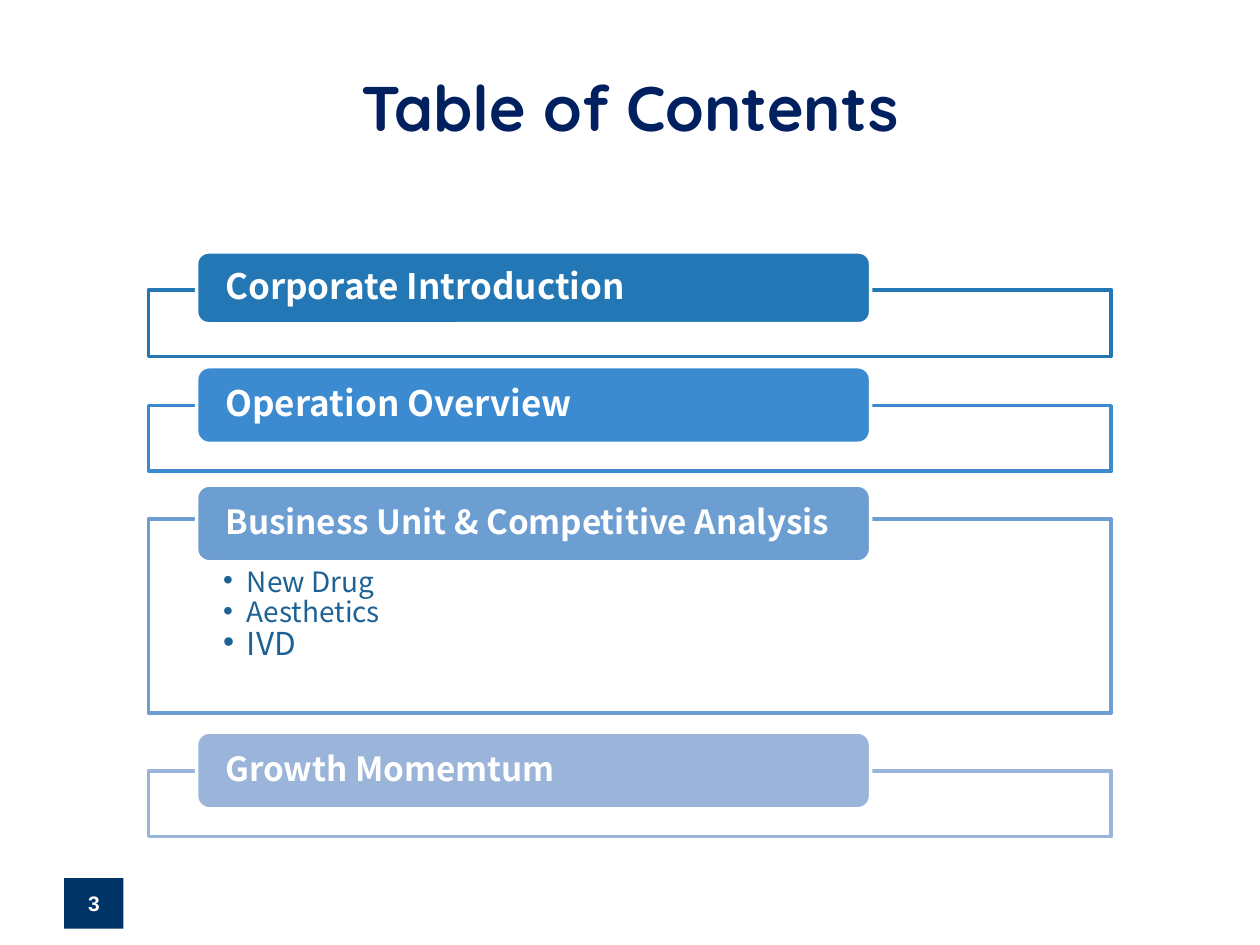
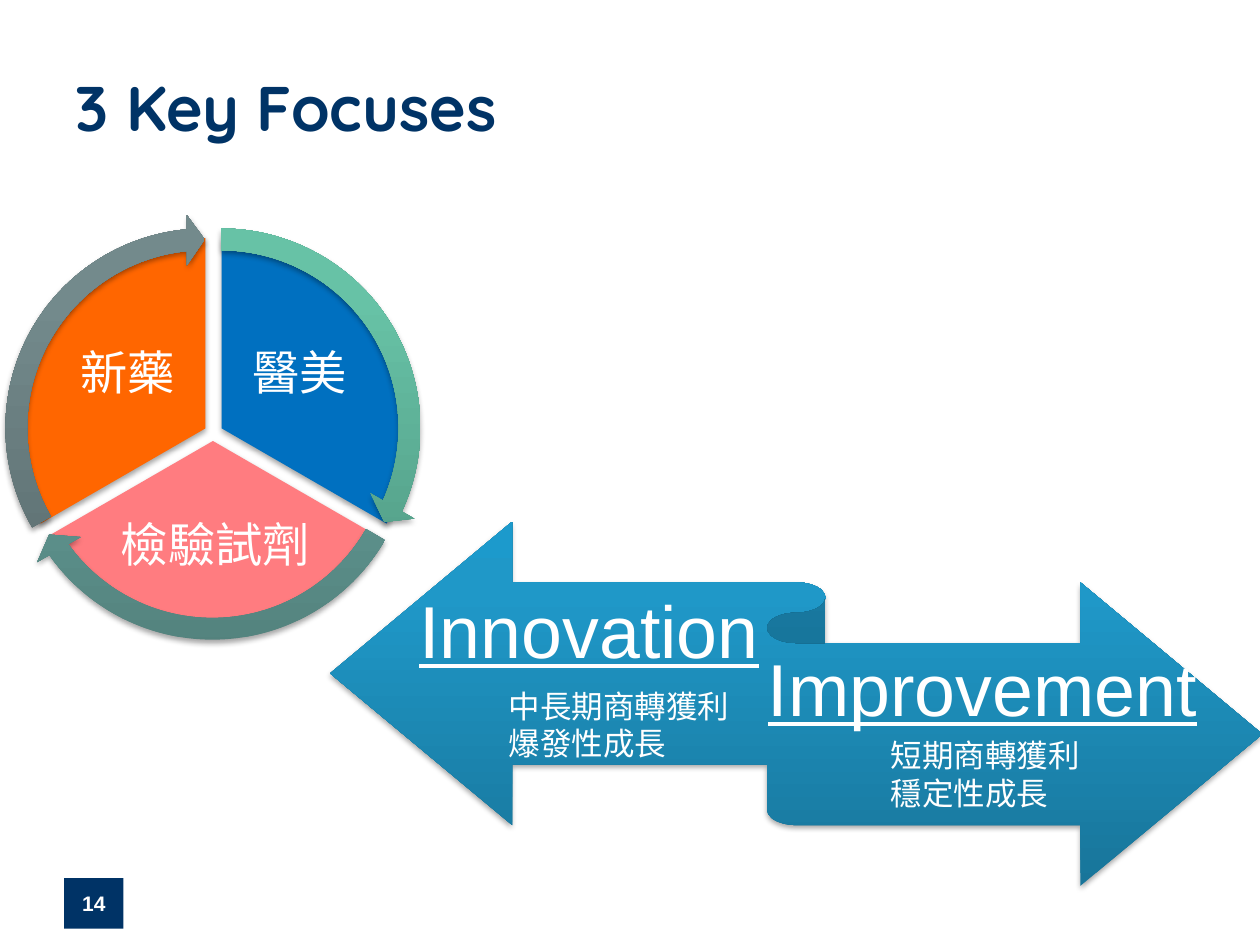
from copy import deepcopy
from dataclasses import dataclass

from lxml.etree import SubElement
from pptx import Presentation
from pptx.dml.color import RGBColor
from pptx.enum.shapes import MSO_SHAPE
from pptx.enum.text import MSO_ANCHOR, MSO_AUTO_SIZE, PP_ALIGN
from pptx.oxml.ns import qn
from pptx.util import Pt

PX = 9144  # EMU per px, 100 px to the inch


@dataclass(frozen=True)
class Theme:
    # Colours
    white: str = "FFFFFF"
    navy: str = "003366"
    contents_title: str = "002060"
    bullet_text: str = "1D6294"
    agenda: tuple = ("2277B4", "3C8ACF", "6D9ED2", "9AB5D9")
    pies: tuple = ("0070C0", "FF7C80", "FF6600")
    arrows: tuple = (("4F9580", "67C2A6", "66C4A7"),
                     ("53827D", "6BA9A3", "6BABA4"),
                     ("596A6C", "738A8C", "738B8E"))
    ribbon: tuple = ("18759A", "1F98C8", "1C9ACC")
    # Fonts
    title_font: str = "Quicksand"
    agenda_font: str = "Noto Sans CJK SC"
    text_font: str = "Arial"
    # Type sizes in points
    title: int = 36
    page_number: int = 12
    agenda_large: int = 20
    agenda_small: int = 19
    bullet: int = 16
    bullet_large: int = 18
    bullet_gap: int = 4
    pie_label: int = 27
    ribbon_label: int = 42
    ribbon_note: int = 18


theme = Theme()


def draw(page, kind, area, fill, line=None, adjustments=(), shadow=False):
    """Add a shape; fill is one colour, or three for a gradient from the bottom up."""
    shape = page.shapes.add_shape(kind, *(length * PX for length in area))
    for index, value in enumerate(adjustments):
        shape.adjustments[index] = value
    if isinstance(fill, tuple):
        shape.fill.gradient()
        stop_list = shape.element.spPr.find(".//" + qn("a:gsLst"))
        stop_list.append(deepcopy(stop_list[-1]))
        for stop, position, colour in zip(shape.fill.gradient_stops, (0, 0.8, 1), fill):
            stop.position = position
            stop.color.rgb = RGBColor.from_string(colour)
        shape.fill.gradient_angle = 90
    else:
        shape.fill.solid()
        shape.fill.fore_color.rgb = RGBColor.from_string(fill)
    if line:
        shape.line.color.rgb = RGBColor.from_string(line)
        shape.line.width = Pt(2)
    else:
        shape.line.fill.background()
    shape.shadow.inherit = False
    if shadow:
        effects = shape.element.spPr.find(qn("a:effectLst"))
        outer = SubElement(effects, qn("a:outerShdw"), blurRad="40000", dist="23000",
                           dir="5400000", rotWithShape="0")
        black = SubElement(outer, qn("a:srgbClr"), val="000000")
        SubElement(black, qn("a:alpha"), val="35000")
    return shape


def write(box, lines, font, size, colour, margins=(10, 5, 10, 5), anchor=MSO_ANCHOR.MIDDLE,
          align=PP_ALIGN.LEFT, spacing=None, gap=0, **font_format):
    """Fill a box with one paragraph per line and format all of them alike."""
    frame = box.text_frame
    left, top, right, bottom = (margin * PX for margin in margins)
    frame_format = {"word_wrap": True, "auto_size": MSO_AUTO_SIZE.NONE,
                    "vertical_anchor": anchor, "margin_left": left, "margin_top": top,
                    "margin_right": right, "margin_bottom": bottom}
    for name, value in frame_format.items():
        setattr(frame, name, value)
    frame.text = "\n".join(lines)
    para_format = {"alignment": align, "line_spacing": spacing,
                   "space_before": Pt(0), "space_after": Pt(gap)}
    span_format = {"name": font, "size": Pt(size), **font_format}
    for para in frame.paragraphs:
        for name, value in para_format.items():
            setattr(para, name, value)
        for span in para.runs:
            for name, value in span_format.items():
                setattr(span.font, name, value)
            span.font.color.rgb = RGBColor.from_string(colour)


deck = Presentation()
deck.slide_width, deck.slide_height = 1000 * PX, 750 * PX

# Pages with the shared title and page number
pages = []
for layout, title, number, colour, align in (
        (1, "Table of Contents", "3", theme.contents_title, PP_ALIGN.CENTER),
        (5, "3 Key Focuses", "14", theme.navy, PP_ALIGN.LEFT)):
    page = deck.slides.add_slide(deck.slide_layouts[layout])
    heading = page.shapes.title
    for name, length in zip(("left", "top", "width", "height"), (50, 30, 900, 109)):
        setattr(heading, name, length * PX)
    write(heading, [title], theme.title_font, theme.title, colour, align=align, bold=True)
    number_box = draw(page, MSO_SHAPE.RECTANGLE, (51, 697, 47, 40), theme.navy)
    write(number_box, [number], theme.text_font, theme.page_number, theme.white,
          align=PP_ALIGN.CENTER, bold=True)
    pages.append(page)
contents, focuses = pages

# Contents: an outlined frame with a title bar across its top edge
agenda = (
    # title, size, bar top and height, frame top and height
    ("Corporate Introduction", theme.agenda_large, 200, 57, 230, 53),
    ("Operation Overview", theme.agenda_large, 291, 61, 322, 52),
    ("Business Unit & Competitive Analysis", theme.agenda_small, 385, 61, 412, 154),
    ("Growth Momemtum", theme.agenda_small, 581, 61, 612, 52),
)
for colour, (title, size, bar_top, bar_height, top, height) in zip(theme.agenda, agenda):
    outline = draw(contents, MSO_SHAPE.RECTANGLE, (118, top, 764, height),
                   theme.white, line=colour)
    fill_colour = outline.element.spPr.find(qn("a:solidFill")).find(qn("a:srgbClr"))
    SubElement(fill_colour, qn("a:alpha"), val="90000")
    bar = draw(contents, MSO_SHAPE.ROUNDED_RECTANGLE, (156, bar_top, 535, bar_height),
               colour, line=theme.white)
    write(bar, [title], theme.agenda_font, size, theme.white,
          margins=(20, 0, 20, 0), spacing=0.9, bold=True)

# Contents: business units listed inside the third frame, in front of it
units = contents.placeholders[1]
for name, length in zip(("left", "top", "width", "height"), (118, 412, 764, 154)):
    setattr(units, name, length * PX)
write(units, ["New Drug", "Aesthetics", "IVD"], theme.agenda_font, theme.bullet,
      theme.bullet_text, margins=(59, 43, 59, 12), anchor=MSO_ANCHOR.TOP,
      spacing=0.7, gap=theme.bullet_gap)
for para in units.text_frame.paragraphs:
    properties = para._p.get_or_add_pPr()
    properties.set("marL", str(19 * PX))
    properties.set("indent", str(-19 * PX))
units.text_frame.paragraphs[-1].runs[0].font.size = Pt(theme.bullet_large)
units.element.getparent().append(units.element)

# Focuses: three pie segments, then an arrow around each
segments = (
    # label, label area, pie left and top, start and end angle
    ("醫美", (184, 253, 108, 90), 25, 189, 162, 18),
    ("檢驗試劑", (90, 395, 162, 79), 18, 199, 18, 90),
    ("新藥", (47, 253, 108, 90), 12, 189, 90, 162),
)
labels = []
for colour, (label, area, left, top, start, end) in zip(theme.pies, segments):
    draw(focuses, MSO_SHAPE.PIE, (left, top, 302, 302), colour,
         adjustments=(start, end), shadow=True)
    labels.append((label, area, theme.pie_label, (4, 4, 4, 4), False))
for colours, (label, area, left, top, start, end) in zip(theme.arrows, segments):
    draw(focuses, MSO_SHAPE.CIRCULAR_ARROW, (left - 19, top - 19, 339, 339), colours,
         adjustments=(0.051, 3.275, end - 3.275, start, 0.059), shadow=True)

# Focuses: two-way ribbon
draw(focuses, MSO_SHAPE.LEFT_RIGHT_RIBBON, (262, 414, 740, 289), theme.ribbon, shadow=True)
labels += [
    ("Innovation", (319, 414, 297, 180), theme.ribbon_label, (0, 16, 0, 17), True),
    ("Improvement", (604, 462, 351, 176), theme.ribbon_label, (0, 16, 0, 17), True),
]

# Focuses: centred labels of the segments and the ribbon
for label, area, size, margins, underline in labels:
    box = focuses.shapes.add_textbox(*(length * PX for length in area))
    write(box, [label], theme.text_font, size, theme.white, margins=margins,
          align=PP_ALIGN.CENTER, spacing=0.9, underline=underline)

# Focuses: notes on the ribbon
for left, top, lines in ((394, 540, ["中長期商轉獲利", "爆發性成長"]),
                         (697, 579, ["短期商轉獲利", "穩定性成長"])):
    box = focuses.shapes.add_textbox(left * PX, top * PX, 268 * PX, 71 * PX)
    write(box, lines, theme.text_font, theme.ribbon_note, theme.white, anchor=MSO_ANCHOR.TOP)

deck.save("out.pptx")
